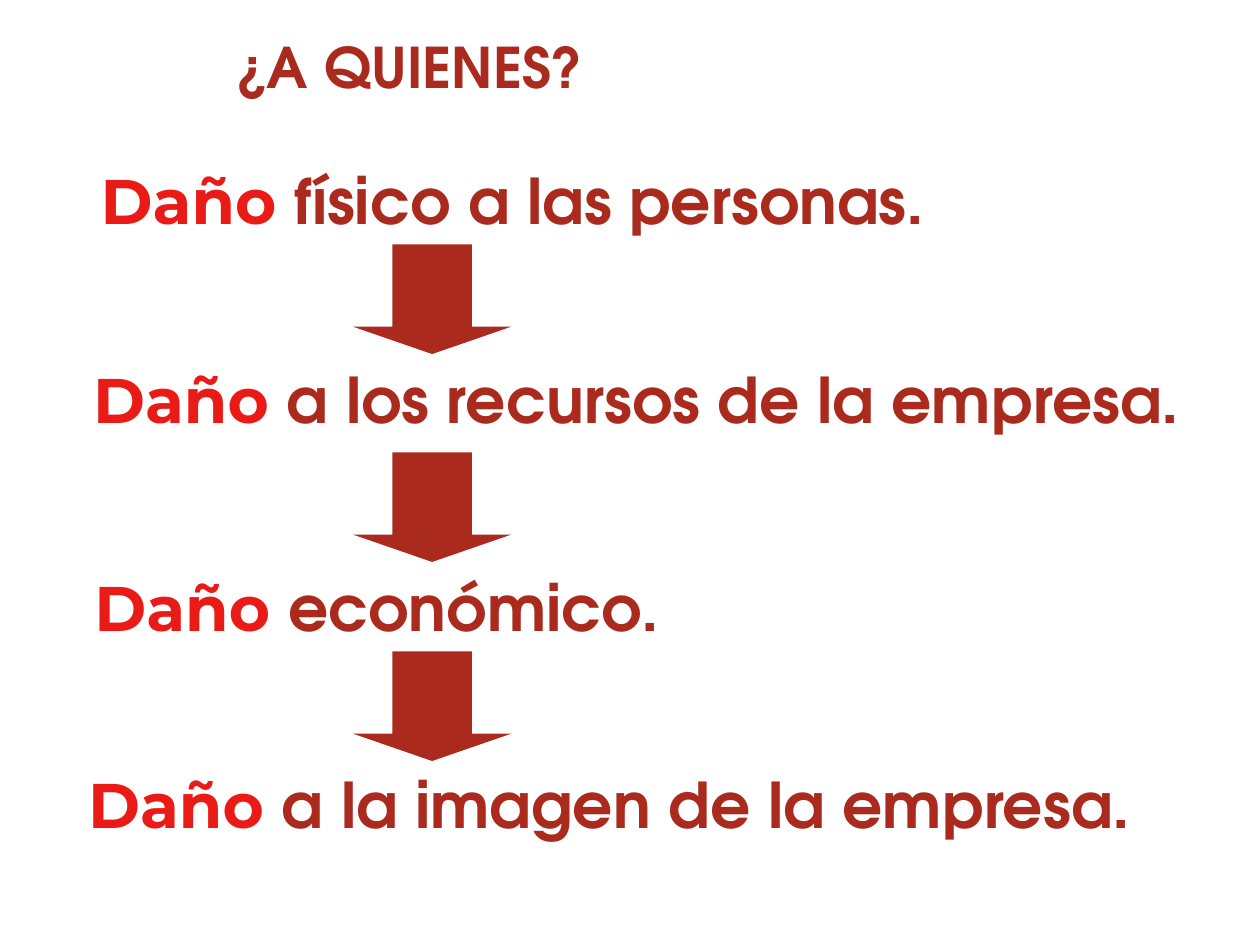
import pptx
import pptx.util
import pptx.dml.color
import pptx.enum.shapes
import pptx.enum.text
from pptx.util import Inches

COLORS = {"brick": "AA2B1E", "red": "EA1B16", "white": "FFFFFF"}
HEADING_FONT = "TeX Gyre Adventor"
ACCENT_FONT = "Montserrat"


class SlideBuilder:
    """Holds the style and the current slide."""

    def __init__(self, page):
        self.page = page

    def color(self, name):
        return pptx.dml.color.RGBColor.from_string(COLORS[name])

    def style_font(self, font, name, size, color):
        font.name = name
        font.size = pptx.util.Pt(size)
        font.bold = True
        font.color.rgb = self.color(color)

    def fit_frame(self, frame):
        frame.word_wrap = True
        frame.auto_size = pptx.enum.text.MSO_AUTO_SIZE.SHAPE_TO_FIT_TEXT
        frame.vertical_anchor = pptx.enum.text.MSO_ANCHOR.TOP

    def background(self):
        fill = self.page.background.fill
        fill.solid()
        fill.fore_color.rgb = self.color("white")

    def title(self, text, left, top, width, height):
        box = self.page.shapes.title
        box.left, box.top = Inches(left), Inches(top)
        box.width, box.height = Inches(width), Inches(height)
        self.fit_frame(box.text_frame)
        box.text_frame.text = text
        para = box.text_frame.paragraphs[0]
        para.alignment = pptx.enum.text.PP_ALIGN.LEFT
        self.style_font(para.font, HEADING_FONT, 32, "brick")

    def damage(self, text, left, top, width):
        box = self.page.shapes.add_textbox(
            Inches(left), Inches(top), Inches(width), Inches(0.7))
        self.fit_frame(box.text_frame)
        para = box.text_frame.paragraphs[0]
        for words, font, color in (("Daño ", ACCENT_FONT, "red"),
                                   (text, HEADING_FONT, "brick")):
            span = para.add_run()
            span.text = words
            self.style_font(span.font, font, 36, color)

    def down_arrow(self, top):
        arrow = self.page.shapes.add_shape(
            pptx.enum.shapes.MSO_SHAPE.DOWN_ARROW,
            Inches(2.8), Inches(top), Inches(1.26), Inches(0.87))
        arrow.adjustments[0] = 0.5
        arrow.adjustments[1] = 0.25
        arrow.shadow.inherit = False
        arrow.fill.solid()
        arrow.fill.fore_color.rgb = self.color("brick")
        arrow.line.fill.background()


def main():
    deck = pptx.Presentation()
    deck.slide_width, deck.slide_height = Inches(10), Inches(7.5)
    slide = SlideBuilder(deck.slides.add_slide(deck.slide_layouts[5]))
    slide.background()

    # Heading
    slide.title("¿A QUIENES?", 1.77, 0.21, 4.59, 0.63)

    # Kinds of damage
    for text, left, top, width in (
            ("físico a las personas.", 0.7, 1.23, 7.88),
            ("a los recursos de la empresa.", 0.64, 2.81, 10.36),
            ("económico.", 0.65, 4.46, 6.06),
            ("a la imagen de la empresa.", 0.6, 6.03, 9.21)):
        slide.damage(text, left, top, width)

    # Arrows from one kind to the next
    for top in (1.94, 3.59, 5.17):
        slide.down_arrow(top)

    deck.save("out.pptx")


if __name__ == "__main__":
    main()
